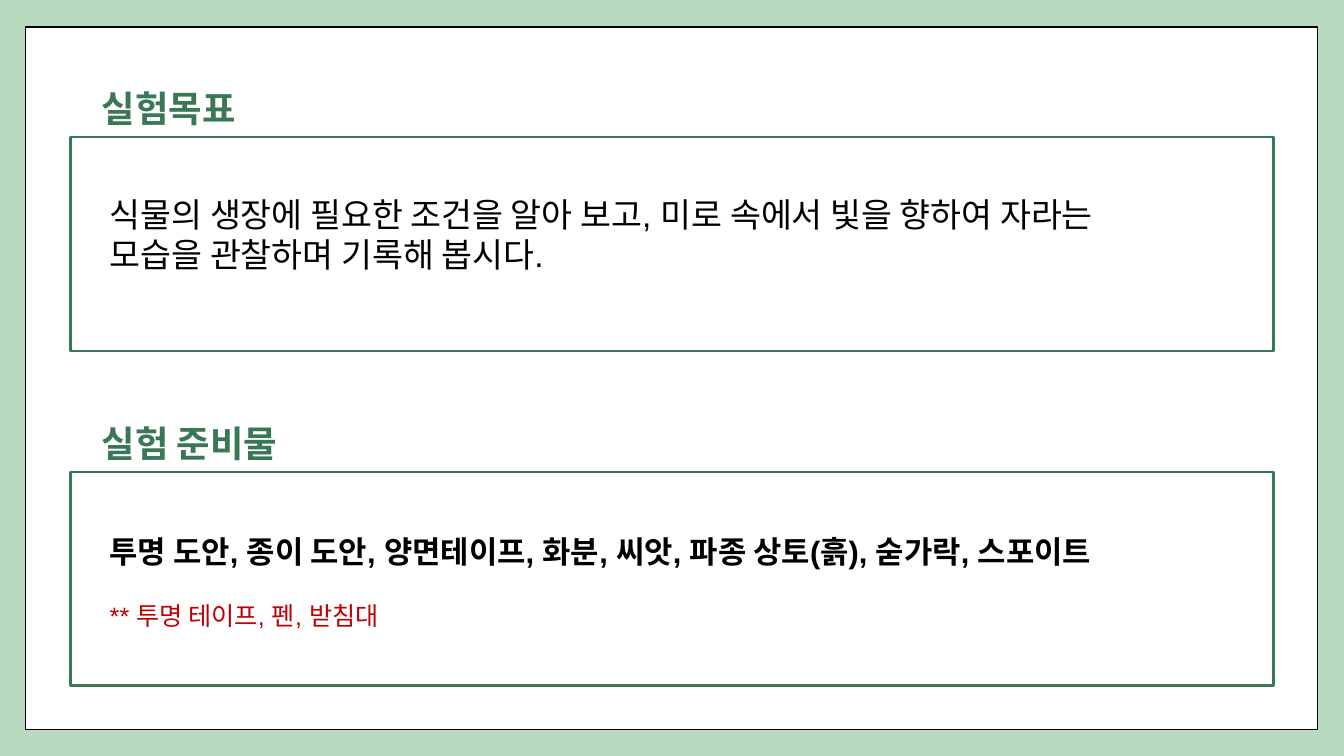
import pptx
import pptx.dml.color
import pptx.enum.shapes
import pptx.enum.text
import pptx.util
from pptx.util import Inches

GREEN = "397755"


def color(code):
    return pptx.dml.color.RGBColor.from_string(code)


def write(para, text, size, font="Arial", code="000000", bold=False, spacing=None):
    span = para.add_run()
    span.text = text
    span.font.name = font
    span.font.size = pptx.util.Pt(size)
    span.font.bold = bold
    span.font.color.rgb = color(code)
    para.line_spacing = spacing


deck = pptx.Presentation()
deck.slide_width = Inches(13.33)
deck.slide_height = Inches(7.5)
page = deck.slides.add_slide(deck.slide_layouts[6])
page.background.fill.solid()
page.background.fill.fore_color.rgb = color("B8DABF")

# White sheet and the two section frames
frames = [
    (0.25, 0.27, 12.82, 6.97, "000000", 1),
    (0.7, 1.36, 11.93, 2.12, GREEN, 1.75),
    (0.7, 4.68, 11.93, 2.12, GREEN, 1.75),
]
for left, top, width, height, line_code, line_width in frames:
    frame = page.shapes.add_shape(
        pptx.enum.shapes.MSO_SHAPE.RECTANGLE,
        Inches(left), Inches(top), Inches(width), Inches(height))
    frame.shadow.inherit = False
    frame.fill.solid()
    frame.fill.fore_color.rgb = color("FFFFFF")
    frame.line.color.rgb = color(line_code)
    frame.line.width = pptx.util.Pt(line_width)

# Section headings
for text, top, width in [("실험목표", 0.75, 1.96), ("실험 준비물", 4.08, 2.3)]:
    box = page.shapes.add_textbox(Inches(0.91), Inches(top), Inches(width), Inches(0.48))
    heading = box.text_frame
    heading.word_wrap = True
    heading.margin_left = heading.margin_right = Inches(0.1)
    heading.margin_top = heading.margin_bottom = Inches(0.1)
    write(heading.paragraphs[0], text, 26, font="Cabin", code=GREEN, bold=True)

# Section bodies
bodies = [
    (1.47, 11.35, 1.31, [
        ("식물의 생장에 필요한 조건을 알아 보고, 미로 속에서 빛을 향하여 자라는",
         dict(size=24, spacing=2.0)),
        ("모습을 관찰하며 기록해 봅시다.", dict(size=24)),
    ]),
    (4.87, 11.53, 1.45, [
        ("투명 도안, 종이 도안, 양면테이프, 화분, 씨앗, 파종 상토(흙), 숟가락, 스포이트",
         dict(size=22, bold=True, spacing=2.0)),
        ("** 투명 테이프, 펜, 받침대", dict(size=18, code="C00000", spacing=2.0)),
    ]),
]
for top, width, height, lines in bodies:
    box = page.shapes.add_textbox(Inches(0.99), Inches(top), Inches(width), Inches(height))
    body = box.text_frame
    body.word_wrap = True
    body.auto_size = pptx.enum.text.MSO_AUTO_SIZE.SHAPE_TO_FIT_TEXT
    for index, (text, style) in enumerate(lines):
        para = body.add_paragraph() if index else body.paragraphs[0]
        write(para, text, **style)

deck.save("out.pptx")
